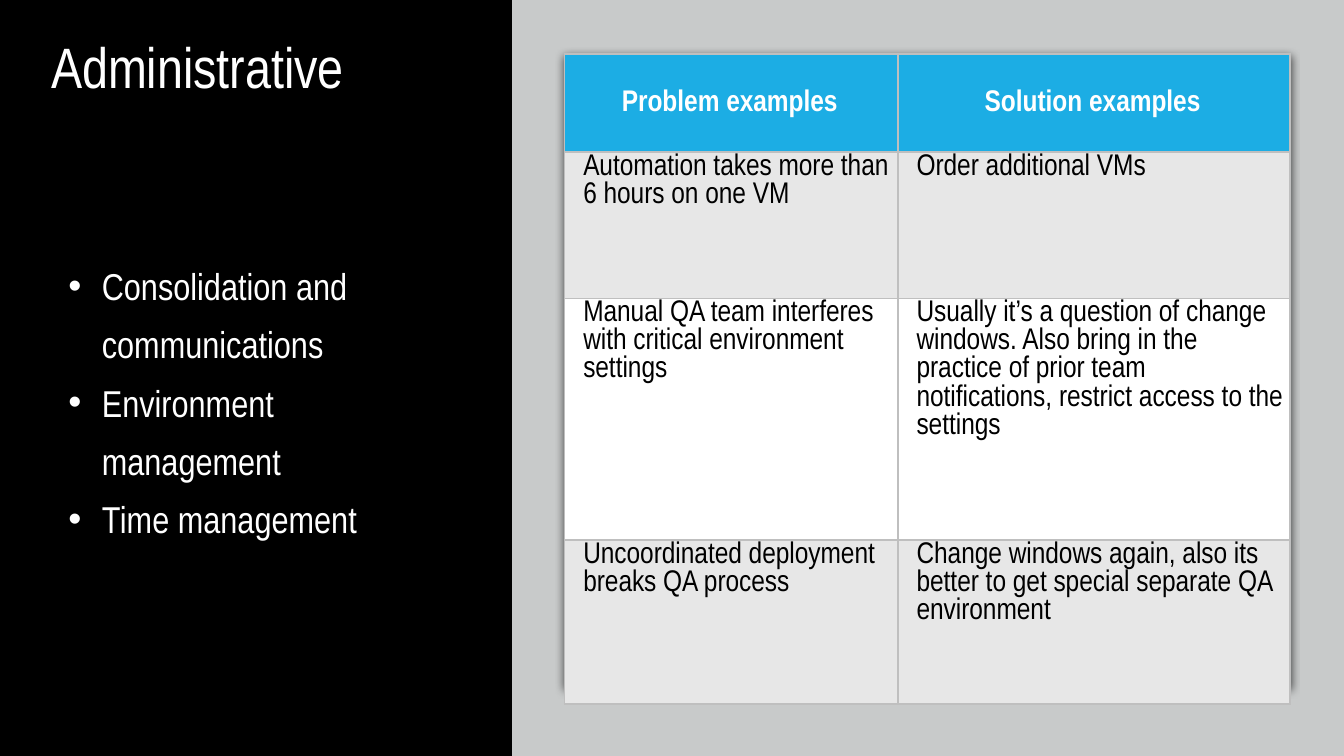
from dataclasses import dataclass

from lxml import etree
from pptx import Presentation
from pptx import util as u
from pptx.dml.color import RGBColor
from pptx.enum import shapes, text
from pptx.oxml import parse_xml
from pptx.oxml.ns import nsdecls, qn

TITLE = "Administrative"
TOPICS = ["Consolidation and communications", "Environment management", "Time management"]
ROWS = [
    ("Problem examples", "Solution examples"),
    ("Automation takes more than 6 hours on one VM", "Order additional VMs"),
    ("Manual QA team interferes with critical environment settings",
     "Usually it’s a question of change windows. Also bring in the practice of prior team "
     "notifications, restrict access to the settings"),
    ("Uncoordinated deployment breaks QA process",
     "Change windows again, also its better to get special separate QA environment"),
]
COL_WIDTHS = [2.48, 2.92]
ROW_HEIGHTS = [0.73, 1.09, 1.8, 1.22]

WIDTH = 10
HEIGHT = WIDTH * 9 / 16
PANEL_LEFT = 3.81
MARGIN = 0.28
CARD_LEFT, CARD_TOP, CARD_HEIGHT = 4.2, 0.4, 4.71


@dataclass(frozen=True)
class Theme:
    font: str = "Arial Narrow"
    dark: str = "000000"
    light: str = "FFFFFF"
    panel: str = "C8CACA"
    header: str = "1CADE4"
    band: str = "E7E7E7"
    border: str = "BFBFBF"
    title_size: float = 30.5
    topic_size: float = 20
    cell_size: float = 16
    cell_leading: float = 15.1


T = Theme()


def rgb(color):
    return RGBColor.from_string(color)


def box(left, top, width, height):
    return [u.Inches(v) for v in (left, top, width, height)]


def write(p, words, size, color, bold=False, align=text.PP_ALIGN.LEFT, leading=None):
    r = p.add_run()
    r.text = words
    r.font.name, r.font.size, r.font.bold = T.font, u.Pt(size), bold
    r.font.color.rgb = rgb(color)
    p.alignment = align
    p.line_spacing = leading
    p.space_before = p.space_after = u.Pt(0)


def add_panel(s, kind, place, fill, line=None):
    sp = s.shapes.add_shape(kind, *box(*place))
    sp.shadow.inherit = False
    sp.fill.solid()
    sp.fill.fore_color.rgb = rgb(fill)
    if line:
        sp.line.color.rgb = rgb(line)
        sp.line.width = u.Pt(0.75)
    else:
        sp.line.fill.background()
    return sp


def add_shadow(sp):
    effects = sp._element.spPr.find(qn("a:effectLst"))
    effects.append(parse_xml(
        f'<a:outerShdw {nsdecls("a")} blurRad="{u.Pt(4.5)}" dist="{u.Pt(1.5)}" dir="5400000" '
        f'rotWithShape="0"><a:srgbClr val="{T.dark}"><a:alpha val="63000"/></a:srgbClr>'
        '</a:outerShdw>'))


def indent(p, left, first=0, bullet=None):
    pPr = p._p.get_or_add_pPr()
    pPr.set("marL", str(u.Inches(left)))
    pPr.set("indent", str(u.Inches(first)))
    if bullet:
        etree.SubElement(pPr, qn("a:buFont")).set("typeface", "Arial")
        etree.SubElement(pPr, qn("a:buChar")).set("char", bullet)


def add_borders(cell):
    tcPr = cell._tc.get_or_add_tcPr()
    for i, side in enumerate("LRTB"):
        tcPr.insert(i, parse_xml(
            f'<a:ln{side} {nsdecls("a")} w="{u.Pt(1)}"><a:solidFill>'
            f'<a:srgbClr val="{T.border}"/></a:solidFill></a:ln{side}>'))


def add_title(s):
    sp = s.shapes.title
    sp.left, sp.top, sp.width, sp.height = box(MARGIN, 0.16, 3.24, 0.72)
    tf = sp.text_frame
    tf.auto_size = text.MSO_AUTO_SIZE.NONE
    tf.vertical_anchor = text.MSO_ANCHOR.MIDDLE
    write(tf.paragraphs[0], TITLE, T.title_size, T.light, leading=0.9)


def add_topics(s):
    tf = s.shapes.add_textbox(*box(MARGIN, 1.81, 3.07, 3.1)).text_frame
    tf.word_wrap = True
    for i, topic in enumerate(TOPICS):
        p = tf.add_paragraph() if i else tf.paragraphs[0]
        indent(p, 0.38, -0.25, "•")
        write(p, topic, T.topic_size, T.light, leading=1.3)


def add_examples(s):
    place = box(CARD_LEFT, CARD_TOP, sum(COL_WIDTHS), sum(ROW_HEIGHTS))
    table = s.shapes.add_table(len(ROWS), len(COL_WIDTHS), *place).table
    for col, width in zip(table.columns, COL_WIDTHS):
        col.width = u.Inches(width)
    for i, (row, height) in enumerate(zip(table.rows, ROW_HEIGHTS)):
        row.height = u.Inches(height)
        fill = T.header if i == 0 else (T.light, T.band)[i % 2]
        for cell, words in zip(row.cells, ROWS[i]):
            cell.margin_left = cell.margin_top = u.Inches(0.01)
            cell.margin_right = u.Inches(0.03)
            cell.margin_bottom = 0
            cell.fill.solid()
            cell.fill.fore_color.rgb = rgb(fill)
            add_borders(cell)
            p = cell.text_frame.paragraphs[0]
            if i == 0:
                cell.vertical_anchor = text.MSO_ANCHOR.MIDDLE
                write(p, words, T.cell_size, T.light, bold=True, align=text.PP_ALIGN.CENTER)
            else:
                indent(p, 0.13)
                write(p, words, T.cell_size, T.dark, leading=u.Pt(T.cell_leading))


def main():
    prs = Presentation()
    prs.slide_width, prs.slide_height = u.Inches(WIDTH), u.Inches(HEIGHT)
    s = prs.slides.add_slide(prs.slide_layouts[5])
    s.background.fill.solid()
    s.background.fill.fore_color.rgb = rgb(T.dark)

    kinds = shapes.MSO_SHAPE
    add_panel(s, kinds.RECTANGLE, (PANEL_LEFT, 0, WIDTH - PANEL_LEFT, HEIGHT), T.panel)
    card = add_panel(s, kinds.ROUNDED_RECTANGLE,
                     (CARD_LEFT, CARD_TOP, sum(COL_WIDTHS), CARD_HEIGHT), T.light, T.panel)
    card.adjustments[0] = 0
    add_shadow(card)
    add_title(s)
    add_topics(s)
    add_examples(s)
    prs.save("out.pptx")


if __name__ == "__main__":
    main()
